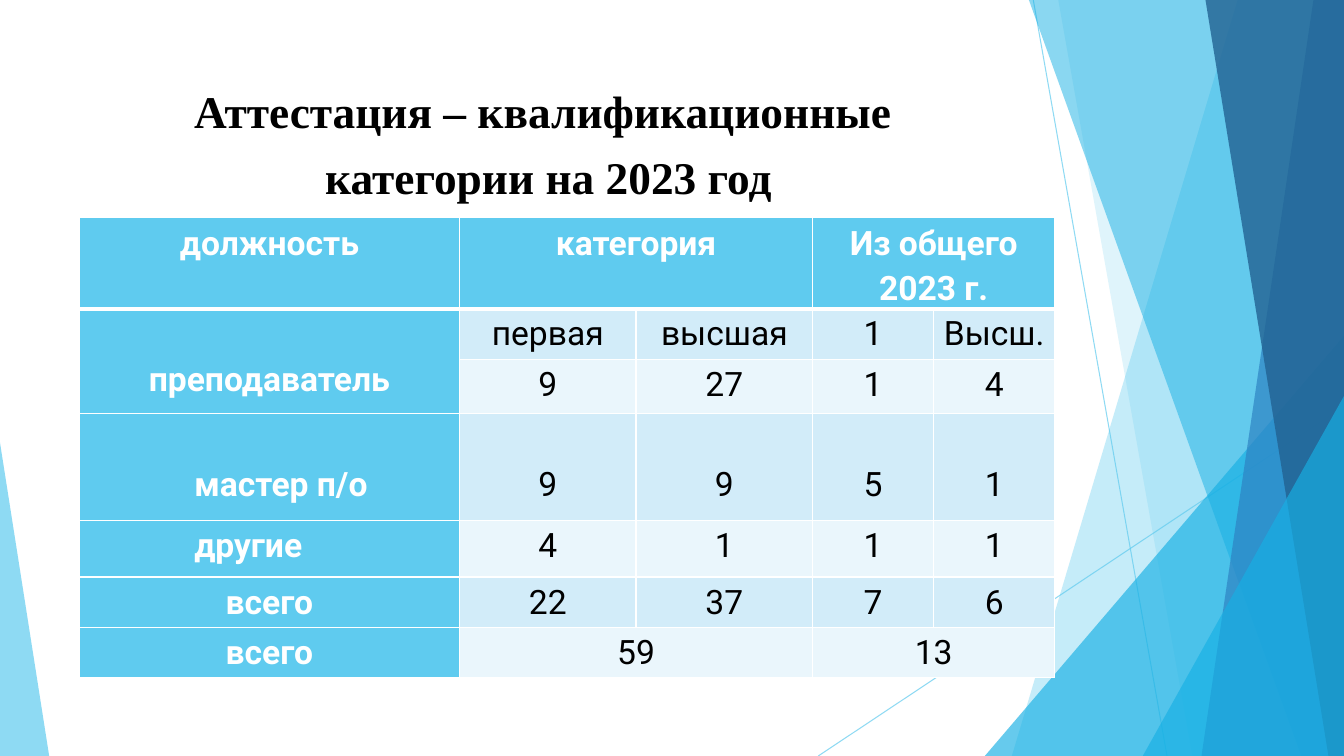
from dataclasses import dataclass
from lxml import etree
from pptx import Presentation
from pptx import util as u
from pptx.dml.color import RGBColor
from pptx.enum import shapes, text
from pptx.oxml import ns


@dataclass(frozen=True)
class Theme:
    sky: str = "5FCBEF"
    aqua: str = "17B0E4"
    blue: str = "2E83C3"
    navy: str = "226292"
    pale: str = "D2ECF9"
    mist: str = "EAF6FC"
    white: str = "FFFFFF"
    black: str = "000000"
    serif: str = "Times New Roman"
    sans: str = "Roboto"
    head: float = 32.4
    body: float = 24


def write(frame, words, font=Theme.sans, size=Theme.body, color=Theme.black,
          bold=False, align=text.PP_ALIGN.CENTER, space=1.15):
    frame.text = words
    frame.word_wrap = True
    para = frame.paragraphs[0]
    para.alignment = align
    para.line_spacing = space
    for run in para.runs:
        run.font.name = font
        run.font.size = u.Pt(size)
        run.font.bold = bold
        run.font.color.rgb = RGBColor.from_string(color)


def tint(shape, fill, color, alpha):
    fill.solid()
    fill.fore_color.rgb = RGBColor.from_string(color)
    tone = shape.element.xpath(".//p:spPr//a:srgbClr")[0]
    etree.SubElement(tone, ns.qn("a:alpha"), val=str(alpha * 1000))


look = Theme()
wide, high = 33.87, 19.05
deck = Presentation()
deck.slide_width, deck.slide_height = u.Cm(wide), u.Cm(high)
slide = deck.slides.add_slide(deck.slide_layouts[5])

rays = [(26.04, 0, 29.41, high), (wide, 10.24, 20.62, high)]
for ends in rays:
    ray = slide.shapes.add_connector(
        shapes.MSO_CONNECTOR.STRAIGHT, *[u.Cm(n) for n in ends])
    ray.line.width = u.Pt(0.75)
    tint(ray, ray.line.fill, look.sky, 70)
    etree.SubElement(ray.element.spPr, ns.qn("a:effectLst"))

facets = [
    ("band", (31.19, 25.5), look.sky, 36),
    ("band", (26.67, 30.05), look.sky, 20),
    ("peak", (24.82, wide, 8.46, 1), look.aqua, 66),
    ("band", (25.93, 32.79), look.aqua, 50),
    ("band", (33.1, 30.28), look.blue, 70),
    ("band", (30.38, 33.48), look.navy, 80),
    ("peak", (28.8, wide, 9.98, 1), look.aqua, 66),
    ("peak", (0, 1.24, 11.15, 0), look.sky, 70),
]
for kind, place, color, alpha in facets:
    if kind == "band":
        top, base = place
        pen = slide.shapes.build_freeform(u.Cm(top), 0)
        pen.add_line_segments([(u.Cm(x), u.Cm(y)) for x, y in
                               [(wide, 0), (wide, high), (base, high)]])
        facet = pen.convert_to_shape()
    else:
        left, right, top, tip = place
        facet = slide.shapes.add_shape(
            shapes.MSO_SHAPE.ISOSCELES_TRIANGLE, u.Cm(left), u.Cm(top),
            u.Cm(right - left), u.Cm(high - top))
        facet.adjustments[0] = tip
    facet.shadow.inherit = False
    tint(facet, facet.fill, color, alpha)
    facet.line.fill.background()

title = slide.shapes.title
title.left, title.top = u.Cm(1.88), u.Cm(1.7)
title.width, title.height = u.Cm(23.88), u.Cm(3.66)
write(title.text_frame, "Аттестация – квалификационные \vкатегории на 2023 год",
      font=look.serif, size=look.head, bold=True, space=1.2)
title.text_frame.vertical_anchor = text.MSO_ANCHOR.TOP

rows = [
    ["должность", "категория", None, "Из общего 2023 г.", None],
    ["преподаватель", "первая", "высшая", "1", "Высш."],
    [None, "9", "27", "1", "4"],
    ["мастер п/о", "9", "9", "5", "1"],
    ["другие", "4", "1", "1", "1"],
    ["всего", "22", "37", "7", "6"],
    ["всего", "59", None, "13", None],
]
cols = [9.58, 4.45, 4.45, 3.05, 3.05]
tall = [2.26, 1.27, 1.38, 2.69, 1.42, 1.27, 1.27]
grid = slide.shapes.add_table(
    len(rows), len(cols), u.Cm(2), u.Cm(5.49),
    u.Cm(sum(cols)), u.Cm(sum(tall))).table
for col, size in zip(grid.columns, cols):
    col.width = u.Cm(size)
for row, size in zip(grid.rows, tall):
    row.height = u.Cm(size)
for r1, c1, r2, c2 in [(0, 1, 0, 2), (0, 3, 0, 4), (1, 0, 2, 0),
                       (6, 1, 6, 2), (6, 3, 6, 4)]:
    grid.cell(r1, c1).merge(grid.cell(r2, c2))

indent = {"мастер п/о", "другие"}
for r, row in enumerate(rows):
    for c, words in enumerate(row):
        cell = grid.cell(r, c)
        label = r == 0 or c == 0
        lower = r == 3 or words == "преподаватель"
        inset = words in indent
        cell.margin_left = u.Cm(2.9 if inset else 0.18)
        cell.margin_right = u.Cm(0.18)
        cell.margin_top = u.Cm(1.14 if lower else 0)
        cell.margin_bottom = 0
        props = cell._tc.get_or_add_tcPr()
        for side in "LRTB":
            thick = (r, side) in [(0, "B"), (1, "T")]
            edge = etree.SubElement(props, ns.qn("a:ln" + side),
                                    w=str(u.Pt(3 if thick else 1)))
            paint = etree.SubElement(edge, ns.qn("a:solidFill"))
            etree.SubElement(paint, ns.qn("a:srgbClr"), val=look.white)
        cell.fill.solid()
        shade = look.sky if label else (look.mist, look.pale)[r % 2]
        cell.fill.fore_color.rgb = RGBColor.from_string(shade)
        if words:
            write(cell.text_frame, words, bold=label,
                  color=look.white if label else look.black,
                  align=text.PP_ALIGN.LEFT if inset else text.PP_ALIGN.CENTER)

deck.save("out.pptx")
